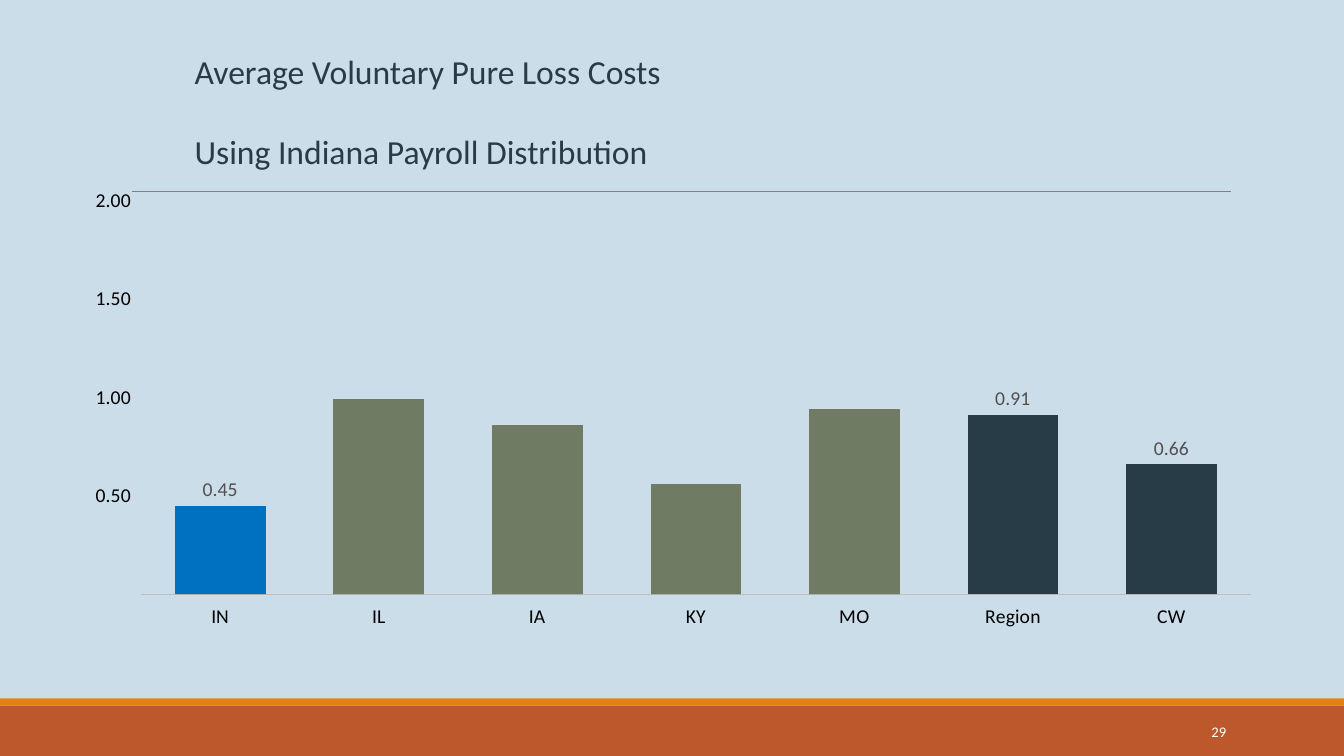
from lxml import etree
from pptx import Presentation, util as u
from pptx.chart.data import CategoryChartData
from pptx.dml.color import RGBColor
from pptx.enum import chart as ch, shapes, text
from pptx.oxml import parse_xml
from pptx.oxml.ns import nsdecls, qn

WIDE, HIGH = 13.33, 7.5
SKY, RUST, AMBER, GRAY = "CCDDEA", "BD582C", "E48312", "808080"
BLUE, OLIVE, NAVY = "0070C0", "6F7B63", "273C47"
STATES = ["IN", "IL", "IA", "KY", "MO", "Region", "CW"]
# name, colour, values, labelled points
COSTS = [
    ("Series 1", BLUE, [0.45] + [None] * 6, [0]),
    ("Series 2", OLIVE, [None, 0.99, 0.86, 0.56, 0.94, 0, 0], []),
    ("Series 3", NAVY, [0] * 5 + [0.91, 0.66], [5, 6]),
]


def color(code):
    return RGBColor.from_string(code)


def inches(*box):
    return [u.Inches(n) for n in box]


def style(font, size, code):
    font.name, font.size = "Calibri", u.Pt(size)
    font.color.rgb = color(code)


def band(slide, top, height, code):
    bar = slide.shapes.add_shape(
        shapes.MSO_SHAPE.RECTANGLE, *inches(0, top, WIDE, height))
    bar.shadow.inherit = False
    bar.fill.solid()
    bar.fill.fore_color.rgb = color(code)
    bar.line.fill.background()


def rule(slide, left, right, y):
    line = slide.shapes.add_connector(
        shapes.MSO_CONNECTOR.STRAIGHT, *inches(left, y, right, y))
    line.line.color.rgb = color(GRAY)
    line.line.width = u.Pt(0.5)
    etree.SubElement(line._element.spPr, qn("a:effectLst"))


def title(slide, box):
    head = slide.shapes.title
    head.left, head.top, head.width, head.height = inches(*box)
    frame = head.text_frame
    frame.text = "Average Voluntary Pure Loss Costs\nUsing Indiana Payroll Distribution"
    frame.word_wrap = True
    frame.auto_size = text.MSO_AUTO_SIZE.SHAPE_TO_FIT_TEXT
    frame.vertical_anchor = text.MSO_ANCHOR.TOP
    for para in frame.paragraphs:
        para.alignment = text.PP_ALIGN.LEFT
        style(para.font, 24, NAVY)
    frame.paragraphs[1].space_before = u.Pt(29)


def number(slide, box):
    frame = slide.shapes.add_textbox(*inches(*box)).text_frame
    frame.text = "29"
    frame.word_wrap = True
    frame.vertical_anchor = text.MSO_ANCHOR.MIDDLE
    para = frame.paragraphs[0]
    para.alignment = text.PP_ALIGN.RIGHT
    para.line_spacing = u.Pt(12.4)
    style(para.font, 10.5, "FFFFFF")


def place(chart, x, y, w, h):
    """Fix the inner plot area, in shares of the chart."""
    area = chart._chartSpace.chart.plotArea
    for old in area.findall(qn("c:layout")):
        area.remove(old)
    sizes = "".join(f'<c:{key} val="{val}"/>'
                    for key, val in zip("xywh", (x, y, w, h)))
    area.insert(0, parse_xml(
        f'<c:layout {nsdecls("c")}><c:manualLayout><c:layoutTarget val="inner"/>'
        f'<c:xMode val="edge"/><c:yMode val="edge"/>{sizes}'
        '</c:manualLayout></c:layout>'))


def axes(chart):
    base, scale = chart.category_axis, chart.value_axis
    for axis in (base, scale):
        style(axis.tick_labels.font, 14, "000000")
        axis.has_major_gridlines = False
    base.major_tick_mark = ch.XL_TICK_MARK.NONE
    base.tick_label_position = ch.XL_TICK_LABEL_POSITION.LOW
    base.format.line.color.rgb = color("BFBFBF")
    base.format.line.width = u.Pt(1)
    scale.minimum_scale, scale.maximum_scale, scale.major_unit = 0, 2, 0.5
    scale.major_tick_mark = ch.XL_TICK_MARK.OUTSIDE
    scale.format.line.fill.background()
    scale.tick_labels.number_format = '0.00;;""'
    scale.tick_labels.number_format_is_linked = False


def bars(slide, box):
    data = CategoryChartData(number_format="0.00")
    data.categories = STATES
    for name, _, vals, _ in COSTS:
        data.add_series(name, vals)
    chart = slide.shapes.add_chart(
        ch.XL_CHART_TYPE.COLUMN_CLUSTERED, *inches(*box), data).chart
    chart.has_legend = chart.has_title = False
    style(chart.font, 14, "A6A6A6")
    plot = chart.plots[0]
    plot.vary_by_categories = False
    plot.gap_width, plot.overlap = 75, 100
    for series, (_, code, _, marks) in zip(plot.series, COSTS):
        series.format.fill.solid()
        series.format.fill.fore_color.rgb = color(code)
        series.invert_if_negative = False
        series.data_labels.show_value = False
        for mark in marks:
            label = series.points[mark].data_label
            style(label.font, 14, "505050")
            label.position = ch.XL_LABEL_POSITION.OUTSIDE_END
    axes(chart)
    place(chart, 0.068, 0.026, 0.915, 0.865)


def main():
    deck = Presentation()
    deck.slide_width, deck.slide_height = inches(WIDE, HIGH)
    slide = deck.slides.add_slide(deck.slide_layouts[5])
    slide.background.fill.solid()
    slide.background.fill.fore_color.rgb = color(SKY)
    band(slide, 7, 0.5, RUST)
    band(slide, 6.93, 0.07, AMBER)
    rule(slide, 1.31, 12.21, 1.9)
    number(slide, (10.83, 7.06, 1.43, 0.4))
    title(slide, (1.83, 0.45, 6.68, 1.31))
    bars(slide, (0.58, 1.87, 12.03, 4.52))
    deck.save("out.pptx")


if __name__ == "__main__":
    main()
